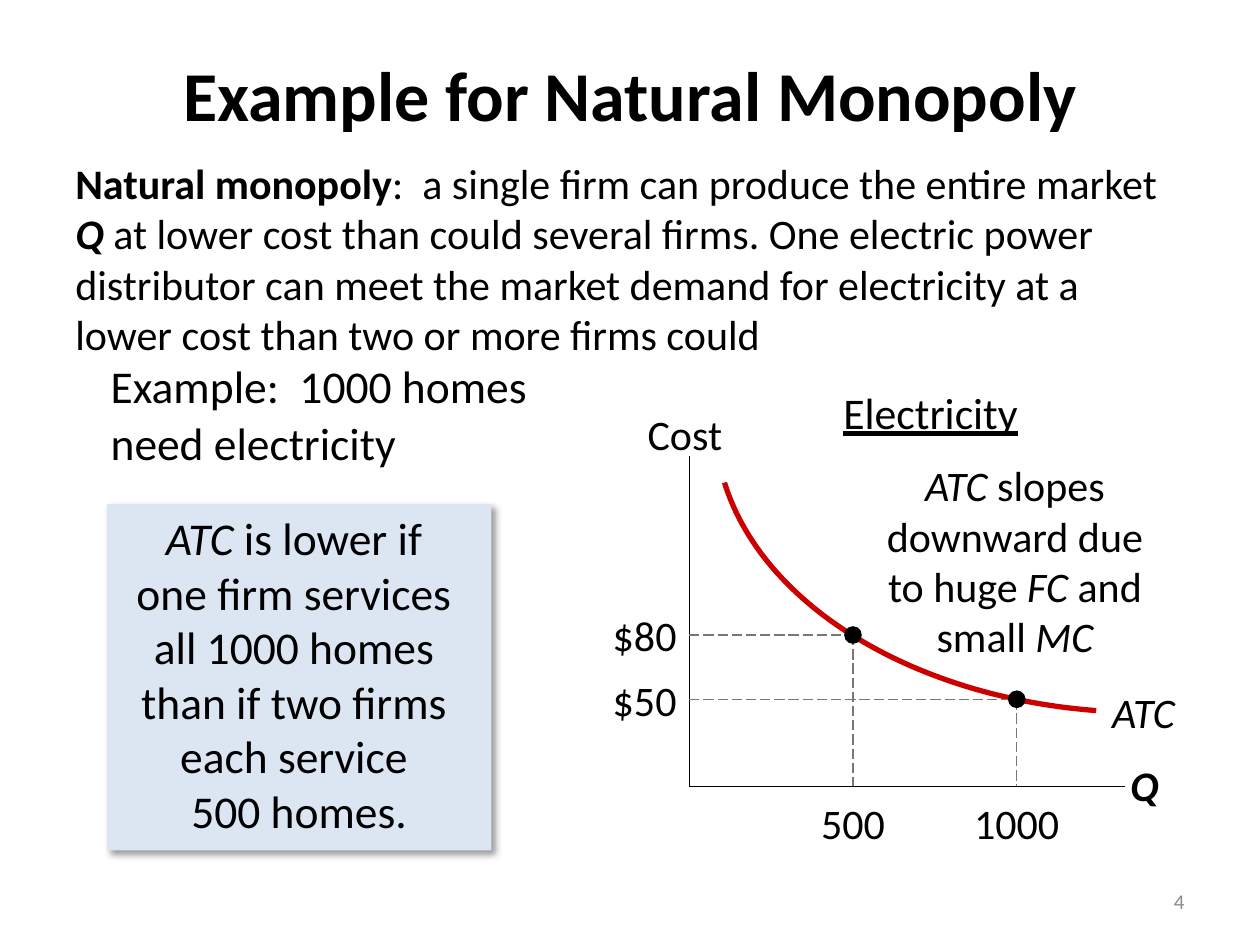
from lxml.etree import SubElement
from pptx import Presentation
from pptx.dml.color import RGBColor
from pptx.enum.dml import MSO_LINE
from pptx.enum.shapes import MSO_CONNECTOR, MSO_SHAPE
from pptx.enum.text import MSO_ANCHOR, MSO_AUTO_SIZE, PP_ALIGN
from pptx.oxml.ns import qn
from pptx.util import Inches, Pt

THEME = {
    "font": "Calibri", "text": "000000", "curve": "CC0000", "guide": "777777",
    "panel": "DCE6F2", "page": "8C8C8C",
    "title": 40, "panel_size": 26, "heading": 25, "body": 24, "page_size": 12,
}
LEFT, CENTER, RIGHT = PP_ALIGN.LEFT, PP_ALIGN.CENTER, PP_ALIGN.RIGHT

# Content: each run is (text, style), with b, i and u for bold, italic, underline
TITLE = [("Example for Natural Monopoly", "b")]
DEFINITION = [
    ("Natural monopoly", "b"),
    (":  a single firm can produce the entire market ", ""),
    ("Q", "bi"),
    (" at lower cost than could several firms. One electric power distributor can meet "
     "the market demand for electricity at a lower cost than two or more firms could", ""),
]
EXAMPLE = [("Example:  1000 homes need electricity", "")]
PANEL = [
    ("ATC", "i"),
    (" is lower if \none firm services \nall 1000 homes \nthan if two firms \n"
     "each service \n500 homes.", ""),
]
CURVE_NOTE = [
    ("ATC", "i"), (" slopes downward due to huge ", ""), ("FC", "i"),
    (" and small ", ""), ("MC", "i"),
]
# Text boxes: runs, (left, top, width, height), alignment, size name
TEXT_BOXES = [
    (DEFINITION, (0.5, 1.2, 9, 1.65), LEFT, "body"),
    (EXAMPLE, (0.78, 2.77, 4.2, 1.07), LEFT, "panel_size"),
    ([("Electricity", "u")], (6.14, 3.01, 2.49, 0.52), CENTER, "heading"),
    (CURVE_NOTE, (6.8, 3.6, 2.51, 1.7), CENTER, "body"),
    ([("Cost", "")], (4.96, 3.19, 0.95, 0.5), CENTER, "body"),
    ([("Q", "bi")], (8.87, 5.98, 0.49, 0.5), LEFT, "body"),
    ([("ATC", "i")], (8.57, 5.4, 1.01, 0.5), CENTER, "body"),
]
# Marked points: homes served, average total cost, height on the slide
POINTS = [(500, 80, 5.04), (1000, 50, 5.55)]

# Diagram geometry in inches
ORIGIN_X, ORIGIN_Y = 5.47, 6.24
AXIS_TOP, AXIS_RIGHT = 3.62, 8.93
INCHES_PER_HOME = 0.0026
DOT = 0.14
CURVE = [(8.7, 5.64), (7.24, 5.53), (6.05, 4.8), (5.75, 3.83)]
CURVE_STEPS = 60


def color(name):
    return RGBColor.from_string(THEME[name])


def write(shape, runs, alignment, size, ink="text", anchor=MSO_ANCHOR.TOP, margin=None):
    frame = shape.text_frame
    frame.word_wrap = True
    frame.auto_size = MSO_AUTO_SIZE.NONE
    frame.vertical_anchor = anchor
    if margin is not None:
        frame.margin_left = frame.margin_right = Inches(margin)
        frame.margin_top = frame.margin_bottom = Inches(margin)
    paragraph = frame.paragraphs[0]
    paragraph.alignment = alignment
    for text, style in runs:
        for number, line in enumerate(text.split("\n")):
            if number:
                paragraph.add_line_break()
            run = paragraph.add_run()
            run.text = line
            font = run.font
            font.name, font.size = THEME["font"], Pt(THEME[size])
            font.color.rgb = color(ink)
            font.bold, font.italic, font.underline = (key in style for key in "biu")
    return paragraph


def add_text(slide, runs, box, alignment, size, **options):
    shape = slide.shapes.add_textbox(*map(Inches, box))
    return write(shape, runs, alignment, size, **options)


def add_line(slide, start, end, ink, dash=None):
    line = slide.shapes.add_connector(MSO_CONNECTOR.STRAIGHT, *map(Inches, start + end))
    line.line.color.rgb = color(ink)
    line.line.width = Pt(0.75)
    if dash:
        line.line.dash_style = dash
    SubElement(line._element.spPr, qn("a:effectLst"))


def add_filled(slide, kind, box, ink):
    shape = slide.shapes.add_shape(kind, *map(Inches, box))
    shape.shadow.inherit = False
    shape.fill.solid()
    shape.fill.fore_color.rgb = color(ink)
    shape.line.fill.background()
    return shape


def add_soft_shadow(shape):
    effects = shape._element.spPr.find(qn("a:effectLst"))
    shadow = SubElement(effects, qn("a:outerShdw"), blurRad=str(Pt(4)), dist=str(Pt(3)),
                        dir=str(45 * 60000), algn="tl", rotWithShape="0")
    ink = SubElement(shadow, qn("a:srgbClr"), val=THEME["text"])
    SubElement(ink, qn("a:alpha"), val="40000")


def bezier(points, t):
    weights = ((1 - t) ** 3, 3 * t * (1 - t) ** 2, 3 * t ** 2 * (1 - t), t ** 3)
    return tuple(Inches(sum(w * p[axis] for w, p in zip(weights, points))) for axis in (0, 1))


def add_curve(slide):
    points = [bezier(CURVE, step / CURVE_STEPS) for step in range(CURVE_STEPS + 1)]
    builder = slide.shapes.build_freeform(*points[0])
    builder.add_line_segments(points[1:], close=False)
    curve = builder.convert_to_shape()
    curve.shadow.inherit = False
    curve.fill.background()
    curve.line.color.rgb = color("curve")
    curve.line.width = Pt(3)


def add_point(slide, homes, cost, y):
    x = ORIGIN_X + homes * INCHES_PER_HOME
    add_line(slide, (ORIGIN_X, y), (x, y), "guide", MSO_LINE.LONG_DASH)
    add_line(slide, (x, y), (x, ORIGIN_Y), "guide", MSO_LINE.LONG_DASH)
    add_filled(slide, MSO_SHAPE.OVAL, (x - DOT / 2, y - DOT / 2, DOT, DOT), "text")
    add_text(slide, [(str(homes), "")], (x - 0.48, 6.28, 0.96, 0.5), CENTER, "body")
    add_text(slide, [(f"${cost}", "")], (4.63, y - 0.2, 0.74, 0.4), RIGHT, "body", margin=0)


def main():
    presentation = Presentation()
    presentation.slide_width, presentation.slide_height = Inches(10), Inches(7.5)
    slide = presentation.slides.add_slide(presentation.slide_layouts[5])

    # Title
    title = slide.shapes.title
    title.left, title.top, title.width, title.height = map(Inches, (0.5, 0.3, 9, 0.88))
    write(title, TITLE, CENTER, "title", anchor=MSO_ANCHOR.MIDDLE)

    # Cost diagram
    add_line(slide, (ORIGIN_X, AXIS_TOP), (ORIGIN_X, ORIGIN_Y), "text")
    add_line(slide, (ORIGIN_X, ORIGIN_Y), (AXIS_RIGHT, ORIGIN_Y), "text")
    add_curve(slide)
    for point in POINTS:
        add_point(slide, *point)

    # Running text and diagram labels
    for runs, box, alignment, size in TEXT_BOXES:
        paragraph = add_text(slide, runs, box, alignment, size)
        if runs is EXAMPLE:
            paragraph.line_spacing = 1.05

    # Conclusion panel
    panel = add_filled(slide, MSO_SHAPE.RECTANGLE, (0.85, 4, 3.05, 2.75), "panel")
    add_soft_shadow(panel)
    write(panel, PANEL, CENTER, "panel_size")

    # Page number
    add_text(slide, [("4", "")], (7.17, 6.95, 2.33, 0.4), RIGHT, "page_size",
             ink="page", anchor=MSO_ANCHOR.MIDDLE)

    presentation.save("out.pptx")


if __name__ == "__main__":
    main()
